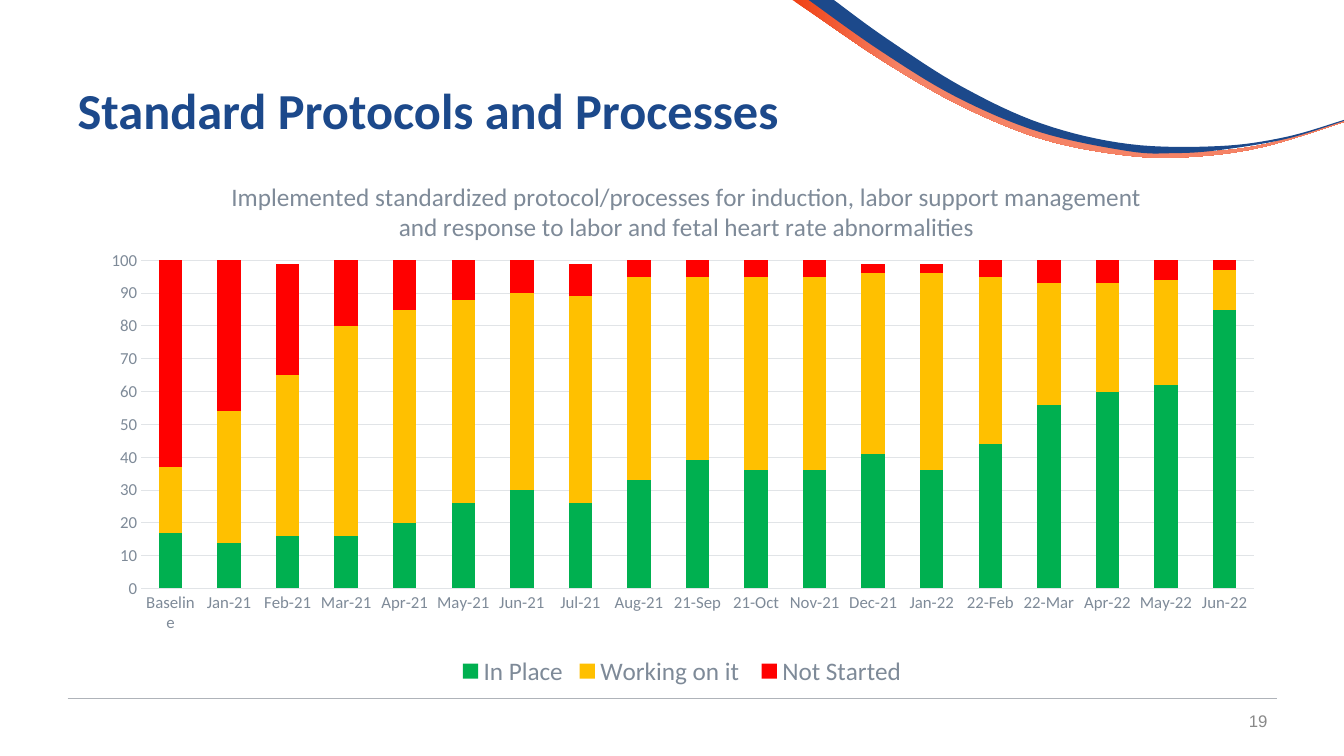
from lxml.etree import SubElement
from pptx import Presentation
from pptx.chart.data import CategoryChartData
from pptx.dml.color import RGBColor
from pptx.enum.chart import XL_CHART_TYPE, XL_LEGEND_POSITION, XL_TICK_MARK
from pptx.enum.shapes import MSO_CONNECTOR
from pptx.enum.text import MSO_ANCHOR, MSO_AUTO_SIZE, PP_ALIGN
from pptx.oxml import parse_xml
from pptx.oxml.ns import nsdecls, qn
from pptx.util import Inches, Pt

NAVY, GRAY, GRID = "1C498B", "7E8A98", "E1E4E7"
ORANGE_TOP = [(7.86, 0), (8.05, 0), (8.82, 0.54), (9.58, 0.99), (10.39, 1.33),
              (11.25, 1.5), (11.9, 1.51), (12.56, 1.43), (13.33, 1.2)]
ORANGE_BOTTOM = [(13.33, 1.21), (12.56, 1.45), (11.91, 1.55), (11.24, 1.55),
                 (10.37, 1.39), (9.55, 1.06), (8.78, 0.62), (8.04, 0.12), (7.86, 0)]
NAVY_TOP = [(8.02, 0), (8.27, 0), (8.79, 0.38), (9.54, 0.86), (10.34, 1.23),
            (11.2, 1.43), (12.09, 1.45), (12.75, 1.36), (13.33, 1.19)]
NAVY_BOTTOM = [(13.33, 1.2), (12.75, 1.38), (12.09, 1.49), (11.64, 1.52),
               (11.19, 1.5), (10.31, 1.31), (9.48, 0.96), (8.71, 0.49), (8.02, 0)]
MONTHS = ["Baseline", "Jan-21", "Feb-21", "Mar-21", "Apr-21", "May-21", "Jun-21",
          "Jul-21", "Aug-21", "21-Sep", "21-Oct", "Nov-21", "Dec-21", "Jan-22",
          "22-Feb", "22-Mar", "Apr-22", "May-22", "Jun-22"]
SERIES = [
    ("In Place", "00B050", [17, 14, 16, 16, 20, 26, 30, 26, 33, 39, 36, 36, 41, 36, 44, 56, 60, 62, 85]),
    ("Working on it ", "FFC000", [20, 40, 49, 64, 65, 62, 60, 63, 62, 56, 59, 59, 55, 60, 51, 37, 33, 32, 12]),
    ("Not Started", "FF0000", [63, 46, 34, 21, 15, 12, 10, 10, 5, 5, 5, 5, 3, 3, 5, 7, 8, 6, 3]),
]
CHART_TITLE = ("Implemented standardized protocol/processes for induction, labor support "
               "management and response to labor and fetal heart rate abnormalities")


def rgb(color):
    """Turn a hex string into a colour."""
    return RGBColor.from_string(color)


def style(font, size, color, name="Calibri", bold=False):
    """Format a font."""
    font.size, font.name, font.bold = Pt(size), name, bold
    font.color.rgb = rgb(color)


def smooth(knots, steps=8):
    """Sample a Catmull-Rom curve through the knots."""
    ends = [knots[0]] + knots + [knots[-1]]
    points = []
    for a, b, c, d in zip(ends, ends[1:], ends[2:], ends[3:]):
        for i in range(steps):
            t = i / steps
            points.append(tuple(
                0.5 * (2 * q + (r - p) * t + (2 * p - 5 * q + 4 * r - u) * t ** 2
                       + (3 * q - p - 3 * r + u) * t ** 3)
                for p, q, r, u in zip(a, b, c, d)))
    return points + [knots[-1]]


def add_ribbon(s, top, bottom):
    """Draw one ribbon between a top and a bottom edge."""
    points = top[:1] + smooth(top[1:]) + smooth(bottom)
    points = [(Inches(x), Inches(max(y, 0))) for x, y in points]
    builder = s.shapes.build_freeform(*points[0], scale=1.0)
    builder.add_line_segments(points[1:], close=True)
    sp = builder.convert_to_shape()
    sp.shadow.inherit = False
    sp.line.fill.background()
    return sp


def add_swoosh(s):
    """Draw the two ribbons in the top right corner."""
    fill = add_ribbon(s, ORANGE_TOP, ORANGE_BOTTOM).fill
    fill.gradient()
    fill.gradient_angle = 0
    for stop, (position, color) in zip(fill.gradient_stops, [(0, "F04115"), (0.2, "F58366")]):
        stop.position = position
        stop.color.rgb = rgb(color)
    fill = add_ribbon(s, NAVY_TOP, NAVY_BOTTOM).fill
    fill.solid()
    fill.fore_color.rgb = rgb(NAVY)


def add_title(s, x, y, w, h):
    """Place and format the slide title."""
    sp = s.shapes.title
    sp.left, sp.top, sp.width, sp.height = map(Inches, (x, y, w, h))
    tf = sp.text_frame
    tf.auto_size, tf.vertical_anchor = MSO_AUTO_SIZE.NONE, MSO_ANCHOR.MIDDLE
    p = tf.paragraphs[0]
    p.alignment, p.line_spacing = PP_ALIGN.LEFT, 0.9
    r = p.add_run()
    r.text = "Standard Protocols and Processes"
    style(r.font, 36, NAVY, bold=True)


def add_footer(s, x, y, w):
    """Draw the footer rule and the page number under its right end."""
    rule = s.shapes.add_connector(MSO_CONNECTOR.STRAIGHT, Inches(x), Inches(y), Inches(x + w), Inches(y))
    rule.line.color.rgb, rule.line.width = rgb("AFB3B9"), Pt(0.5)
    SubElement(rule._element.spPr, qn("a:effectLst"))
    sp = s.shapes.add_textbox(Inches(x + w - 3), Inches(y + 0.02), Inches(3), Inches(0.4))
    tf = sp.text_frame
    tf.word_wrap, tf.vertical_anchor = True, MSO_ANCHOR.MIDDLE
    p = tf.paragraphs[0]
    p.alignment = PP_ALIGN.RIGHT
    r = p.add_run()
    r.text = "19"
    style(r.font, 12, "898989", "Arial")


def set_layout(element, index, **fractions):
    """Give a chart part a manual layout in fractions of the chart."""
    for old in element.findall(qn("c:layout")):
        element.remove(old)
    target = '<c:layoutTarget val="inner"/>' if "w" in fractions else ""
    modes = "".join(f'<c:{k}Mode val="edge"/>' for k in "xy")
    values = "".join(f'<c:{k} val="{v}"/>' for k, v in fractions.items())
    element.insert(index, parse_xml(
        f'<c:layout {nsdecls("c")}><c:manualLayout>{target}{modes}{values}</c:manualLayout></c:layout>'))


def add_status_chart(s, x, y, w, h):
    """Add the stacked column chart of status by month."""
    data = CategoryChartData()
    data.categories = MONTHS
    for name, _, values in SERIES:
        data.add_series(name, values)
    chart = s.shapes.add_chart(XL_CHART_TYPE.COLUMN_STACKED, *map(Inches, (x, y, w, h)), data).chart
    style(chart.font, 10, "444C55")
    p = chart.chart_title.text_frame.paragraphs[0]
    r = p.add_run()
    r.text = CHART_TITLE
    style(r.font, 18, GRAY)
    set_layout(chart.chart_title._element, 1, x=0.117, y=0.05)

    plot = chart.plots[0]
    plot.gap_width, plot.overlap, plot.vary_by_categories = 150, 100, False
    for series, (_, color, _) in zip(plot.series, SERIES):
        series.format.fill.solid()
        series.format.fill.fore_color.rgb = rgb(color)
    set_layout(chart._chartSpace.chart.plotArea, 0, x=0.045, y=0.208, w=0.936, h=0.603)

    for axis in (chart.category_axis, chart.value_axis):
        axis.major_tick_mark = axis.minor_tick_mark = XL_TICK_MARK.NONE
        style(axis.tick_labels.font, 12, GRAY)
    axis = chart.value_axis
    axis.minimum_scale, axis.maximum_scale, axis.major_unit = 0, 100, 10
    axis.format.line.fill.background()
    for line in (axis.major_gridlines.format.line, chart.category_axis.format.line):
        line.color.rgb, line.width = rgb(GRID), Pt(0.75)

    chart.has_legend = True
    chart.legend.position = XL_LEGEND_POSITION.BOTTOM
    chart.legend.include_in_layout = False
    style(chart.legend.font, 18, GRAY)


def main():
    """Build the slide and save it."""
    prs = Presentation()
    prs.slide_width, prs.slide_height = Inches(13.33), Inches(7.5)
    s = prs.slides.add_slide(prs.slide_layouts[5])
    add_swoosh(s)
    add_footer(s, 0.67, 6.93, 12)
    add_title(s, 0.67, 0.4, 12, 1.45)
    add_status_chart(s, 0.87, 1.46, 11.79, 5.4)
    prs.save("out.pptx")


if __name__ == "__main__":
    main()
